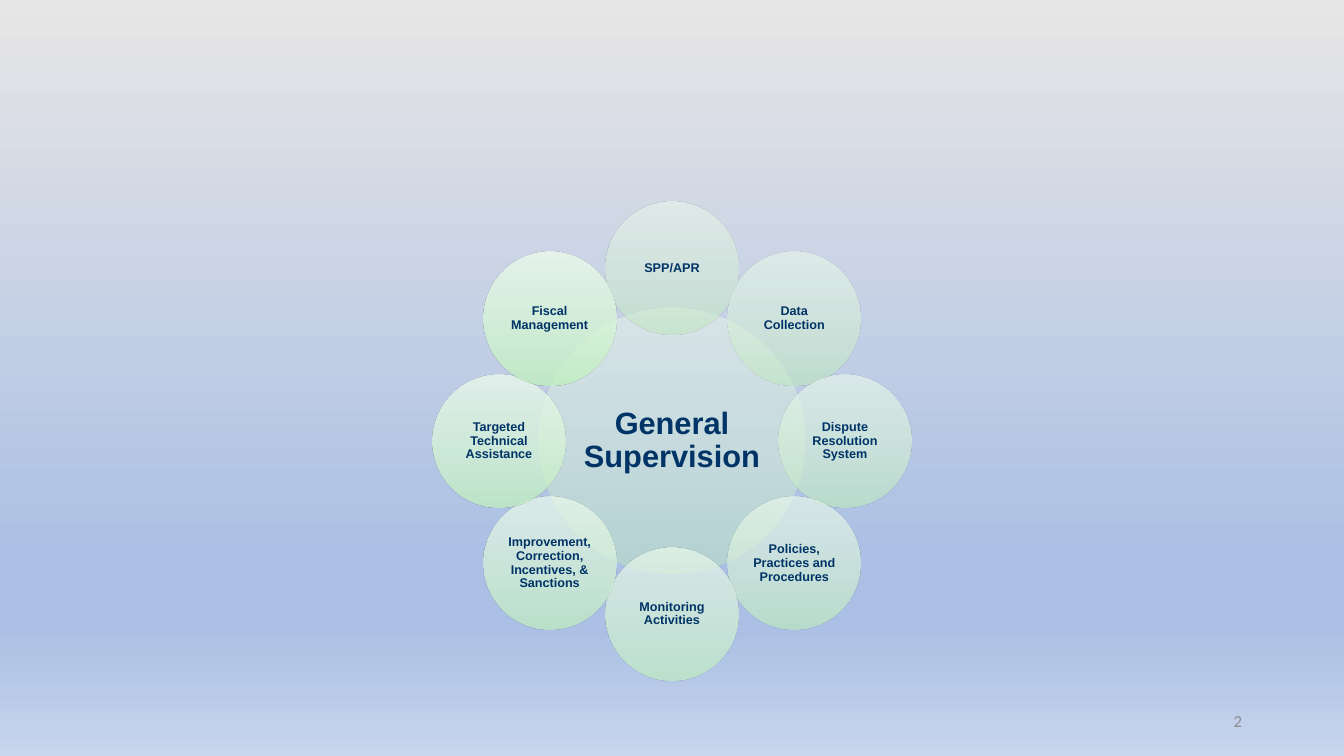
from math import cos, radians, sin

from lxml.etree import SubElement
from pptx import Presentation
from pptx.dml.color import RGBColor
from pptx.enum.shapes import MSO_SHAPE as SHAPE
from pptx.enum.text import MSO_ANCHOR as ANCHOR, PP_ALIGN as ALIGN
from pptx.oxml.ns import qn
from pptx.util import Pt

PX = 914400 / 100.8  # EMU per px
COLORS = {
    "navy": "003366", "gray": "8C8C8C",
    "sky_top": "E7E6E6", "sky_mid": "ABC0E4", "sky_low": "C7D5ED",
    "hub_low": "BEE7BE", "hub_mid": "D2EDD2", "hub_top": "EDF9ED",
    "last_low": "BFF0BF", "last_mid": "D2F4D2", "last_top": "EDFBED",
}
TOPICS = [
    "SPP/APR", "Data Collection", "Dispute Resolution System",
    "Policies, Practices and Procedures", "Monitoring Activities",
    "Improvement, Correction, Incentives, & Sanctions",
    "Targeted Technical Assistance", "Fiscal Management",
]
CX, CY, RING = 672, 441, 173
HUB_SIZE, TOPIC_SIZE = 266, 133


def set_gradient(fill, parent, stops, angle, alpha=100):
    fill.gradient()
    grad = next(parent.iter(qn("a:gradFill")))
    stop_list = grad.find(qn("a:gsLst"))
    for old in list(stop_list):
        stop_list.remove(old)
    for pos, color in stops:
        gs = SubElement(stop_list, qn("a:gs"), pos=str(pos * 1000))
        clr = SubElement(gs, qn("a:srgbClr"), val=color)
        if alpha < 100:
            SubElement(clr, qn("a:alpha"), val=str(round(alpha * 1000)))
    grad.find(qn("a:lin")).set("ang", str(angle * 60000))


def add_circle(shapes, cx, cy, size, text, font_size, inset, share):
    sp = shapes.add_shape(SHAPE.OVAL, round((cx - size / 2) * PX), round((cy - size / 2) * PX),
                          round(size * PX), round(size * PX))
    sp.shadow.inherit = False
    sp.line.fill.background()
    # Colour and opacity move from the hub to the last topic
    stops = []
    for pos, part in ((0, "low"), (35, "mid"), (100, "top")):
        start = RGBColor.from_string(COLORS["hub_" + part])
        end = RGBColor.from_string(COLORS["last_" + part])
        mix = RGBColor(*(round(a + (b - a) * share) for a, b in zip(start, end)))
        stops.append((pos, str(mix)))
    set_gradient(sp.fill, sp._element, stops, 270, 50 + 30 * share)

    tf = sp.text_frame
    tf.word_wrap = True
    tf.vertical_anchor = ANCHOR.MIDDLE
    tf.margin_left = tf.margin_right = tf.margin_top = tf.margin_bottom = round(inset * PX)
    p = tf.paragraphs[0]
    p.text = text
    p.alignment = ALIGN.CENTER
    p.line_spacing = 0.9
    p.font.name, p.font.size, p.font.bold = "Arial", Pt(font_size), True
    p.font.color.rgb = RGBColor.from_string(COLORS["navy"])


prs = Presentation()
prs.slide_width, prs.slide_height = round(1344 * PX), round(756 * PX)
s = prs.slides.add_slide(prs.slide_layouts[6])

# Background
set_gradient(s.background.fill, s._element,
             [(0, COLORS["sky_top"]), (74, COLORS["sky_mid"]),
              (83, COLORS["sky_mid"]), (100, COLORS["sky_low"])], 90)

# Hub and ring of topics, clockwise from the top
diagram = s.shapes.add_group_shape().shapes
add_circle(diagram, CX, CY, HUB_SIZE, "General Supervision", 22, 3, 0)
for i, topic in enumerate(TOPICS):
    angle = radians(360 / len(TOPICS) * i)
    add_circle(diagram, CX + RING * sin(angle), CY - RING * cos(angle),
               TOPIC_SIZE, topic, 9, 2, (i + 1) / len(TOPICS))

# Slide number
box = s.shapes.add_textbox(*(round(v * PX) for v in (950, 701, 302, 40)))
tf = box.text_frame
tf.word_wrap = True
tf.vertical_anchor = ANCHOR.MIDDLE
p = tf.paragraphs[0]
p.text = "2"
p.alignment = ALIGN.RIGHT
p.font.name, p.font.size = "Calibri", Pt(12)
p.font.color.rgb = RGBColor.from_string(COLORS["gray"])

prs.save("out.pptx")
